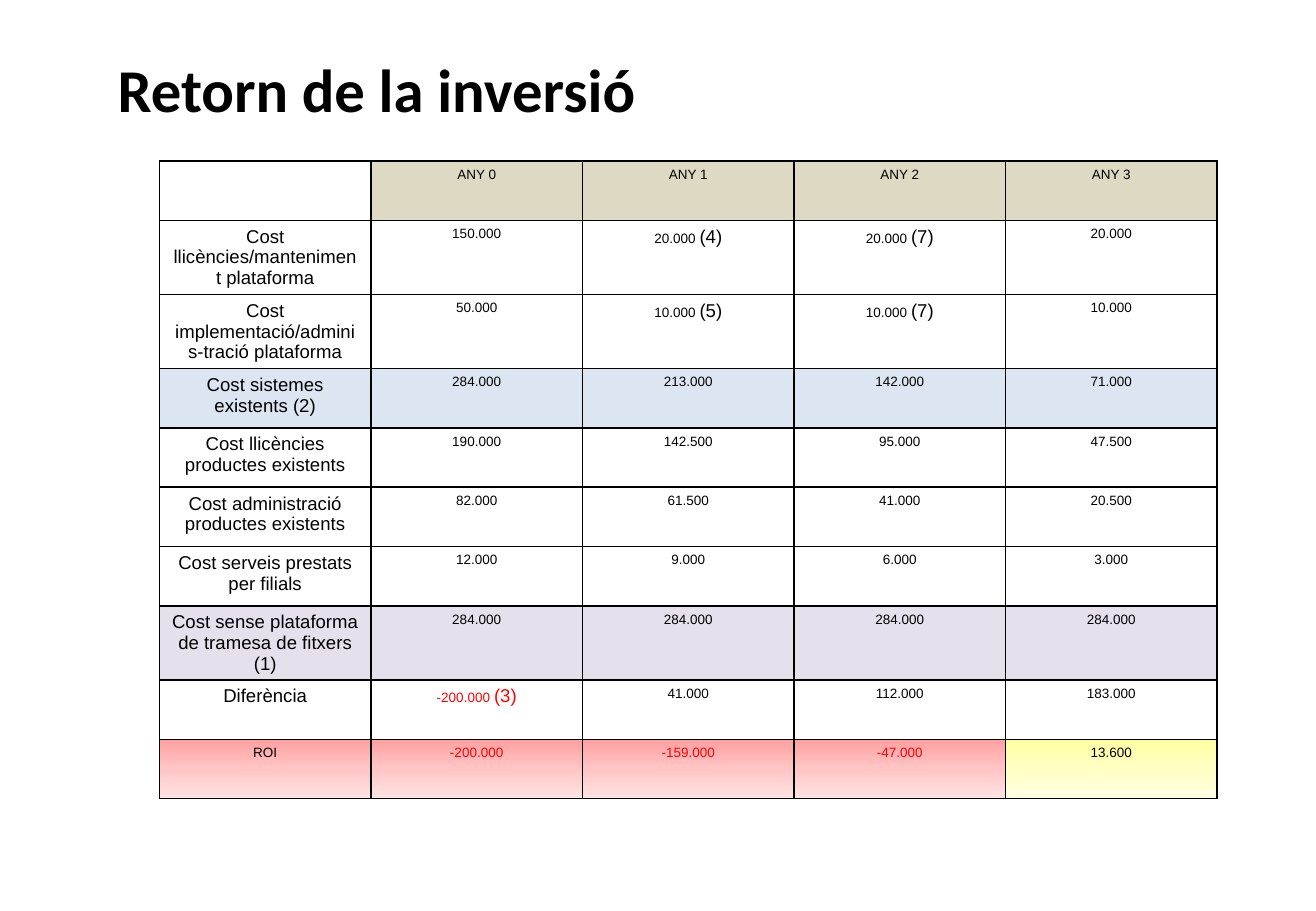
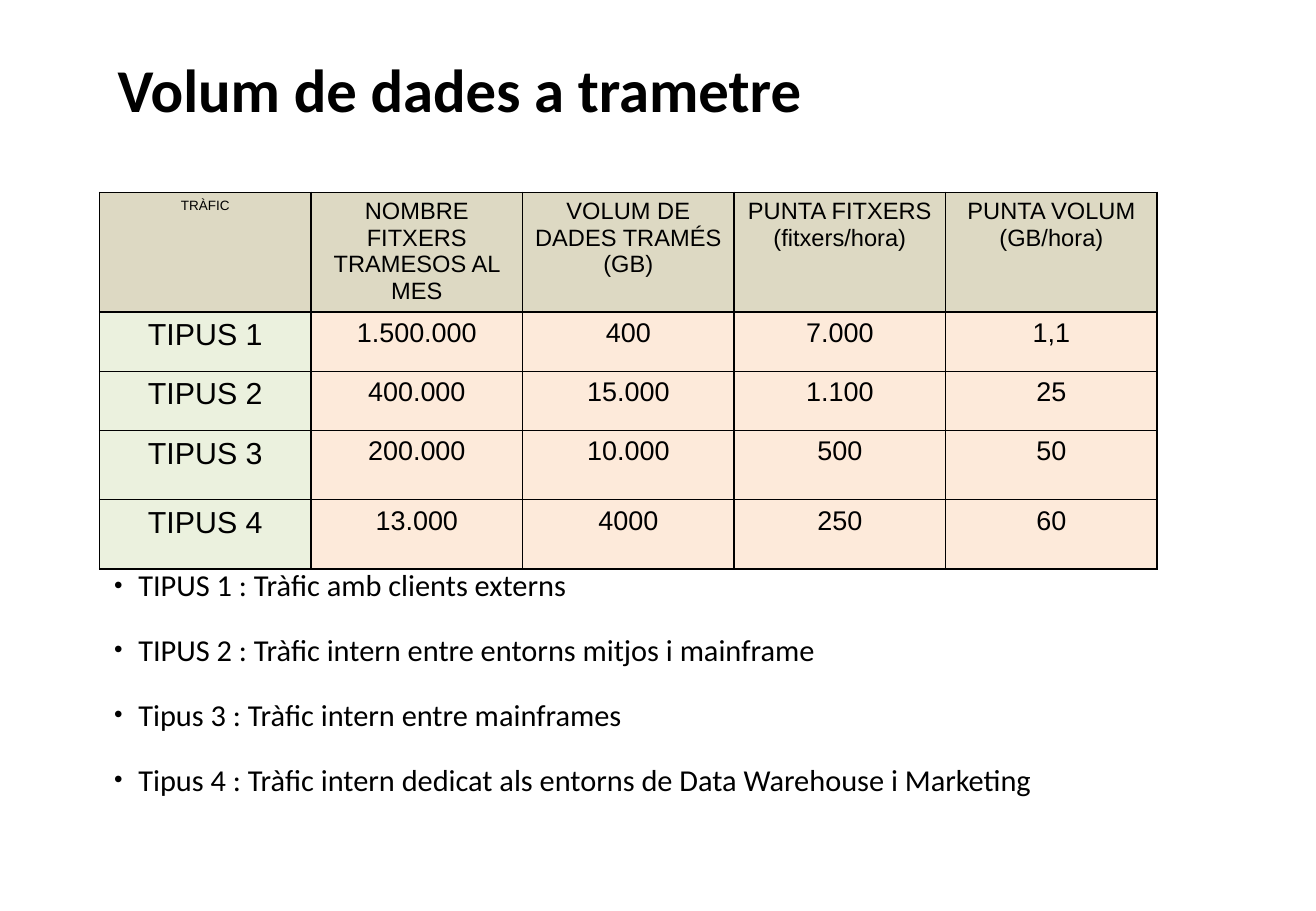
from lxml.etree import SubElement
from pptx import Presentation
from pptx.dml.color import RGBColor
from pptx.enum.text import PP_ALIGN
from pptx.oxml import parse_xml
from pptx.oxml.ns import nsdecls, qn
from pptx.util import Pt

COLORS = {
    "black": "000000",
    "negative": "FF0000",
    "header": "DDD9C3",
    "existing": "DCE6F2",
    "baseline": "E6E0EC",
    "type": "EBF1DE",
    "figure": "FDEADA",
    "loss": ("FFA0A0", "FFC5C5", "FFE3E3"),
    "gain": ("FFFFA0", "FFFFC5", "FFFFE3"),
}
COLUMN_WIDTH = 125.4
ROW_HEIGHT = 35.2
TALL_ROW_HEIGHT = 43.9

TITLE_FONT = {"name": "Calibri", "size": Pt(36), "bold": True}
BODY_FONT = {"name": "Calibri", "size": Pt(18), "bold": False}
BULLET_FORMAT = {
    "alignment": PP_ALIGN.JUSTIFY,
    "line_spacing": 1.15,
    "space_before": Pt(3.6),
    "space_after": Pt(10),
}

RETURN_ROWS = [
    ("", "ANY 0", "ANY 1", "ANY 2", "ANY 3"),
    ("Cost llicències/manteniment plataforma", "150.000", "20.000 (4)", "20.000 (7)", "20.000"),
    ("Cost implementació/adminis-tració plataforma", "50.000", "10.000 (5)", "10.000 (7)", "10.000"),
    ("Cost sistemes existents (2)", "284.000", "213.000", "142.000", "71.000"),
    ("Cost llicències productes existents", "190.000", "142.500", "95.000", "47.500"),
    ("Cost administració productes existents", "82.000", "61.500", "41.000", "20.500"),
    ("Cost serveis prestats per filials", "12.000", "9.000", "6.000", "3.000"),
    ("Cost sense plataforma de tramesa de fitxers (1)", "284.000", "284.000", "284.000", "284.000"),
    ("Diferència", "-200.000 (3)", "41.000", "112.000", "183.000"),
    ("ROI", "-200.000", "-159.000", "-47.000", "13.600"),
]
RETURN_HEIGHTS = [TALL_ROW_HEIGHT if row in (1, 2, 7) else ROW_HEIGHT for row in range(10)]

TRAFFIC_ROWS = [
    ("TRÀFIC", "NOMBRE FITXERS TRAMESOS AL MES", "VOLUM DE DADES TRAMÉS (GB)",
     "PUNTA FITXERS (fitxers/hora)", "PUNTA VOLUM (GB/hora)"),
    ("TIPUS 1", "1.500.000", "400", "7.000", "1,1"),
    ("TIPUS 2", "400.000", "15.000", "1.100", "25"),
    ("TIPUS 3", "200.000", "10.000", "500", "50"),
    ("TIPUS 4", "13.000", "4000", "250", "60"),
]
TRAFFIC_HEIGHTS = [70, ROW_HEIGHT, ROW_HEIGHT, 41, 41]

TRAFFIC_TYPES = [
    "TIPUS 1 : Tràfic amb clients externs",
    "TIPUS 2 : Tràfic intern entre entorns mitjos i mainframe",
    "Tipus 3 : Tràfic intern entre mainframes",
    "Tipus 4 : Tràfic intern dedicat als entorns de Data Warehouse i Marketing",
]


def apply_format(target, values):
    for name, value in values.items():
        setattr(target, name, value)


def add_run(paragraph, text, font_format, color="black"):
    run = paragraph.add_run()
    run.text = text
    apply_format(run.font, font_format)
    run.font.color.rgb = RGBColor.from_string(COLORS[color])


def add_text_frame(slide, left, top, width, height):
    box = slide.shapes.add_textbox(Pt(left), Pt(top), Pt(width), Pt(height))
    box.text_frame.word_wrap = True
    return box.text_frame


def add_title(slide, text):
    frame = add_text_frame(slide, 62.6, 26.6, 660, 30)
    frame.margin_top = Pt(4.2)
    add_run(frame.paragraphs[0], text, TITLE_FONT)


def add_bullets(slide, lines):
    frame = add_text_frame(slide, 60.5, 329, 654.5, 159)
    for index, line in enumerate(lines):
        paragraph = frame.add_paragraph() if index else frame.paragraphs[0]
        apply_format(paragraph, BULLET_FORMAT)
        add_run(paragraph, line, BODY_FONT)
        properties = paragraph._p.get_or_add_pPr()
        properties.set("marL", str(Pt(14.4)))
        properties.set("indent", str(-Pt(14.4)))
        SubElement(properties, qn("a:buSzPct"), val="80000")
        SubElement(properties, qn("a:buFont"), typeface="Arial")
        SubElement(properties, qn("a:buChar"), char="•")


def draw_borders(cell):
    properties = cell._tc.get_or_add_tcPr()
    for side in ("lnL", "lnR", "lnT", "lnB"):
        line = SubElement(properties, qn(f"a:{side}"), w=str(Pt(1)))
        solid = SubElement(line, qn("a:solidFill"))
        SubElement(solid, qn("a:srgbClr"), val=COLORS["black"])


def fill_cell(cell, fill):
    if fill is None:
        cell.fill.background()
    elif isinstance(COLORS[fill], tuple):
        stops = "".join(
            f'<a:gs pos="{index * 50000}"><a:srgbClr val="{color}"/></a:gs>'
            for index, color in enumerate(COLORS[fill])
        )
        cell._tc.get_or_add_tcPr().append(parse_xml(
            f'<a:gradFill {nsdecls("a")}><a:gsLst>{stops}</a:gsLst>'
            '<a:lin ang="5400000" scaled="0"/></a:gradFill>'
        ))
    else:
        cell.fill.solid()
        cell.fill.fore_color.rgb = RGBColor.from_string(COLORS[fill])


def add_table(slide, left, top, rows, heights, style_cell):
    columns = len(rows[0])
    table = slide.shapes.add_table(
        len(rows), columns, Pt(left), Pt(top), Pt(COLUMN_WIDTH * columns), Pt(sum(heights))
    ).table
    apply_format(table, {"first_row": False, "horz_banding": False})
    for column in table.columns:
        column.width = Pt(COLUMN_WIDTH)
    for row_index, values in enumerate(rows):
        table.rows[row_index].height = Pt(heights[row_index])
        for column_index, text in enumerate(values):
            cell = table.cell(row_index, column_index)
            cell.margin_bottom = Pt(0)
            runs, fill = style_cell(row_index, column_index, text)
            draw_borders(cell)
            fill_cell(cell, fill)
            paragraph = cell.text_frame.paragraphs[0]
            paragraph.alignment = PP_ALIGN.CENTER
            color = "negative" if text.startswith("-") else "black"
            for run_text, size in runs:
                font_format = {"name": "Arial", "size": Pt(size), "bold": False}
                add_run(paragraph, run_text, font_format, color)


def style_return_cell(row, column, text):
    fill = {3: "existing", 7: "baseline", 9: "gain" if column == 4 else "loss"}.get(row)
    if row == 0 and column:
        fill = "header"
    if column == 0:
        return ([(text, 8 if row == 9 else 11)] if text else []), fill
    number, space, note = text.partition(" (")
    if note:
        return [(number + " ", 8), ("(" + note, 11)], fill
    return [(text, 8)], fill


def style_traffic_cell(row, column, text):
    if row == 0:
        return [(text, 14 if column else 8)], "header"
    return ([(text, 16)], "figure") if column else ([(text, 18)], "type")


def add_slide(presentation, title):
    slide = presentation.slides.add_slide(presentation.slide_layouts[6])
    add_title(slide, title)
    return slide


def main():
    presentation = Presentation()
    apply_format(presentation, {"slide_width": Pt(780), "slide_height": Pt(540)})

    return_slide = add_slide(presentation, "Retorn de la inversió")
    add_table(return_slide, 94.5, 95.5, RETURN_ROWS, RETURN_HEIGHTS, style_return_cell)

    traffic_slide = add_slide(presentation, "Volum de dades a trametre")
    add_bullets(traffic_slide, TRAFFIC_TYPES)
    add_table(traffic_slide, 59, 114, TRAFFIC_ROWS, TRAFFIC_HEIGHTS, style_traffic_cell)

    presentation.save("out.pptx")


if __name__ == "__main__":
    main()
